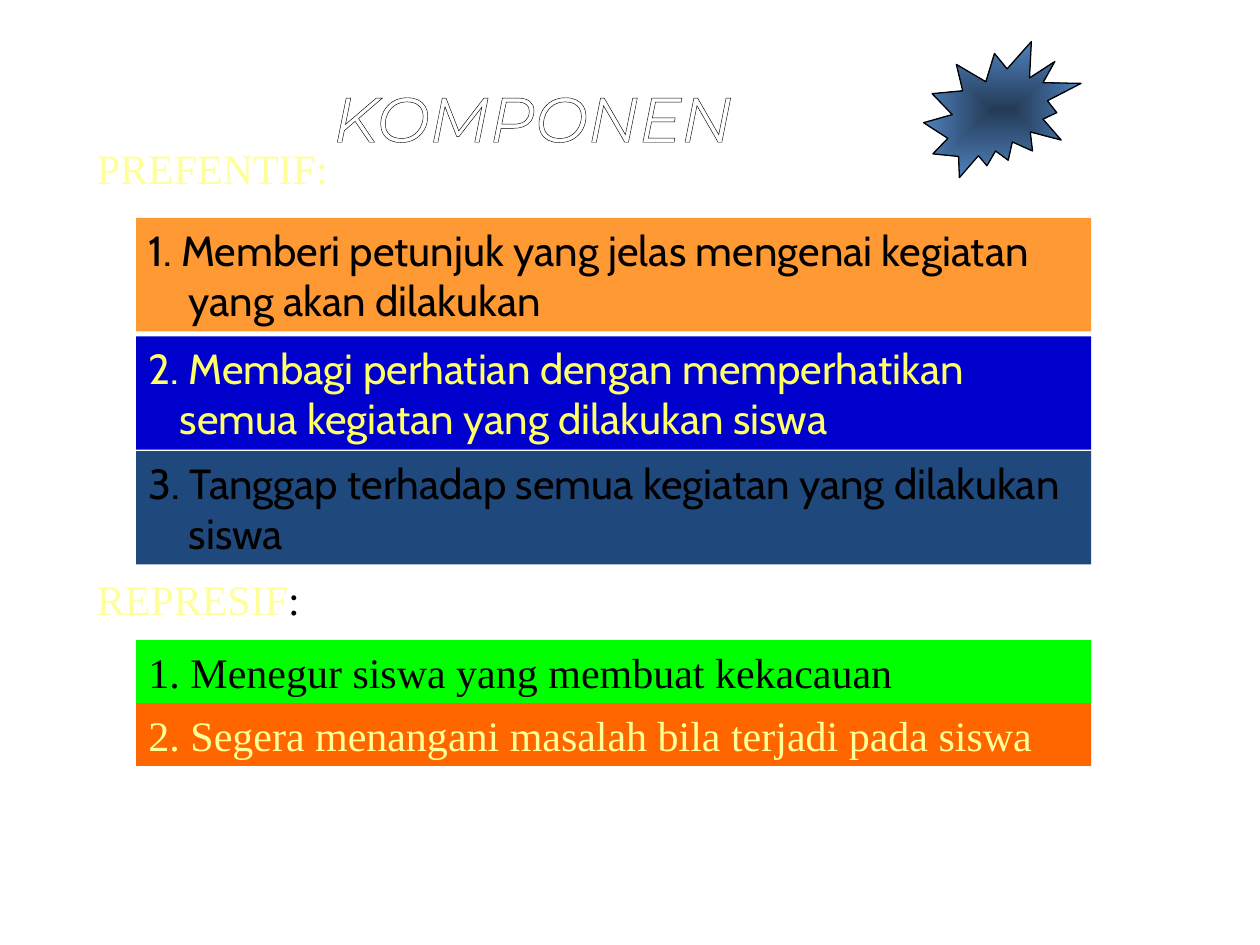
from lxml import etree
from pptx import Presentation
from pptx.dml.color import RGBColor
from pptx.enum.shapes import MSO_SHAPE
from pptx.enum.text import MSO_ANCHOR, PP_ALIGN
from pptx.oxml import parse_xml
from pptx.oxml.ns import nsdecls, qn
from pptx.util import Inches, Pt

RECT = MSO_SHAPE.RECTANGLE
BURST = MSO_SHAPE.EXPLOSION2
TOP = MSO_ANCHOR.TOP
LEFT, CENTER = PP_ALIGN.LEFT, PP_ALIGN.CENTER

BLACK = RGBColor(0x00, 0x00, 0x00)
WHITE = RGBColor(0xFF, 0xFF, 0xFF)
ORANGE = RGBColor(0xFF, 0x99, 0x33)
BLUE = RGBColor(0x00, 0x00, 0xCC)
NAVY = RGBColor(0x1F, 0x49, 0x7D)
GREEN = RGBColor(0x00, 0xFF, 0x00)
RED_ORANGE = RGBColor(0xFF, 0x66, 0x00)
YELLOW = RGBColor(0xFF, 0xFF, 0x66)
PALE_YELLOW = RGBColor(0xFF, 0xFF, 0x99)
BURST_CORE = RGBColor(0x24, 0x3B, 0x57)
BURST_EDGE = RGBColor(0x4F, 0x81, 0xBD)
SANS, SERIF, DISPLAY = "Cabin", "Times New Roman", "Montserrat"


def add_run(p, text, color, **fmt):
    r = p.add_run()
    r.text = text
    for name, value in fmt.items():
        setattr(r.font, name, value)
    r.font.color.rgb = color
    return r


prs = Presentation()
prs.slide_width, prs.slide_height = Inches(10), Inches(7.5)
s = prs.slides.add_slide(prs.slide_layouts[6])

bars = [
    (1.73, 0.9, ORANGE, BLACK, SANS, 0.32,
     "1. Memberi petunjuk yang jelas mengenai kegiatan yang akan dilakukan"),
    (2.67, 0.9, BLUE, YELLOW, SANS, 0.25,
     "2. Membagi perhatian dengan memperhatikan semua kegiatan yang dilakukan siswa"),
    (3.58, 0.9, NAVY, BLACK, SANS, 0.32,
     "3. Tanggap terhadap semua kegiatan yang dilakukan siswa"),
    (5.08, 0.5, GREEN, BLACK, SERIF, 0.25,
     "1. Menegur siswa yang membuat kekacauan"),
    (5.58, 0.5, RED_ORANGE, PALE_YELLOW, SERIF, 0,
     "2. Segera menangani masalah bila terjadi pada siswa"),
]
for top, height, fill, color, font, indent, text in bars:
    sp = s.shapes.add_shape(RECT, Inches(1.08), Inches(top), Inches(7.58), Inches(height))
    sp.shadow.inherit = False
    sp.fill.solid()
    sp.fill.fore_color.rgb = fill
    sp.line.fill.background()
    tf = sp.text_frame
    tf.word_wrap = True
    tf.vertical_anchor = TOP
    p = tf.paragraphs[0]
    p.alignment = LEFT
    pPr = p._p.get_or_add_pPr()
    pPr.set("marL", str(Inches(indent)))
    pPr.set("indent", str(-Inches(indent)))
    add_run(p, text, color, size=Pt(24), name=font)

headings = [
    (1.08, 2.25, [("PREFENTIF:", PALE_YELLOW)]),
    (4.5, 1.92, [("REPRESIF", PALE_YELLOW), (":", BLACK)]),
]
for top, width, parts in headings:
    tf = s.shapes.add_textbox(Inches(0.67), Inches(top), Inches(width), Inches(0.5)).text_frame
    tf.word_wrap = True
    for text, color in parts:
        add_run(tf.paragraphs[0], text, color, size=Pt(24), name=SERIF)

tf = s.shapes.add_textbox(Inches(2.48), Inches(0.58), Inches(3.5), Inches(0.7)).text_frame
tf.word_wrap = False
tf.margin_left = tf.margin_right = Inches(0)
p = tf.paragraphs[0]
p.alignment = CENTER
r = add_run(p, "KOMPONEN", WHITE, size=Pt(36), name=DISPLAY, italic=True)
outline = parse_xml(
    f'<a:ln {nsdecls("a")} w="{Pt(0.75)}"><a:solidFill>'
    f'<a:srgbClr val="{BLACK}"/></a:solidFill></a:ln>')
r._r.get_or_add_rPr().insert(0, outline)

sp = s.shapes.add_shape(BURST, Inches(7.33), Inches(0.33), Inches(1.25), Inches(1.08))
sp.shadow.inherit = False
sp.line.color.rgb = BLACK
sp.line.width = Pt(0.75)
sp.fill.gradient()
for stop, position, color in zip(sp.fill.gradient_stops, (0, 1), (BURST_CORE, BURST_EDGE)):
    stop.position = position
    stop.color.rgb = color
grad = sp._element.spPr.find(qn("a:gradFill"))
grad.remove(grad.find(qn("a:lin")))
shade = etree.SubElement(grad, qn("a:path"), {"path": "shape"})
etree.SubElement(shade, qn("a:fillToRect"), dict.fromkeys("ltrb", "50000"))

prs.save("out.pptx")
